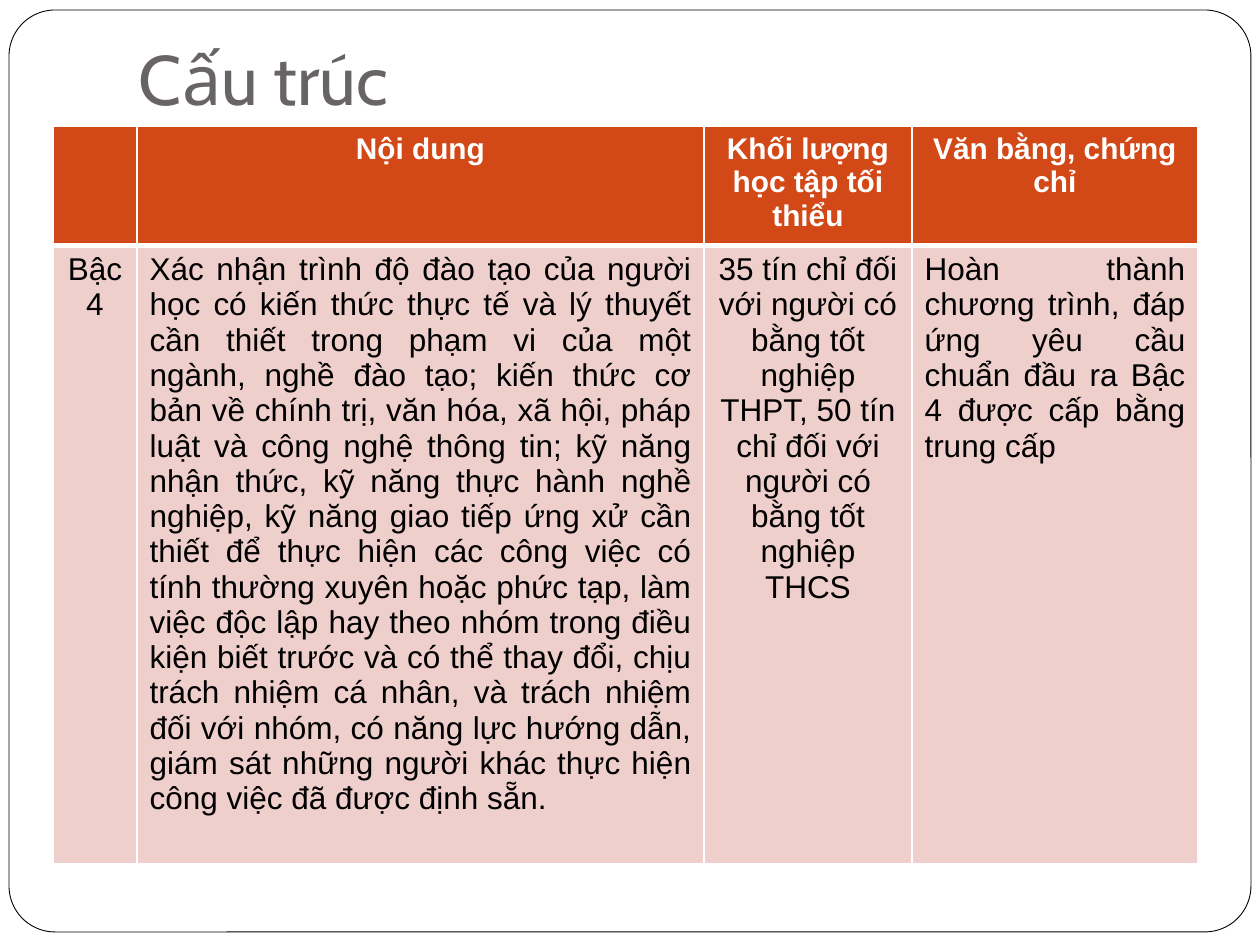
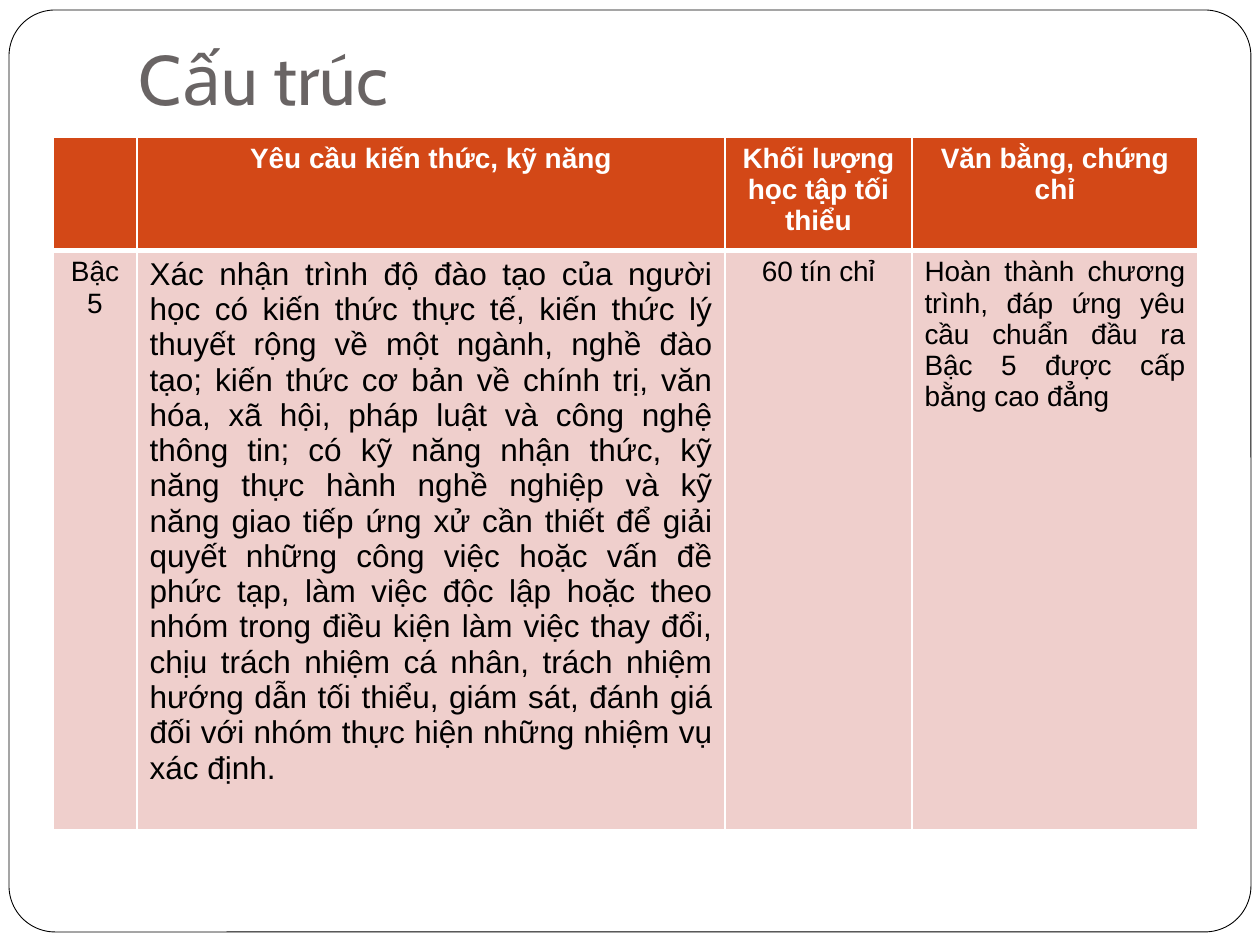
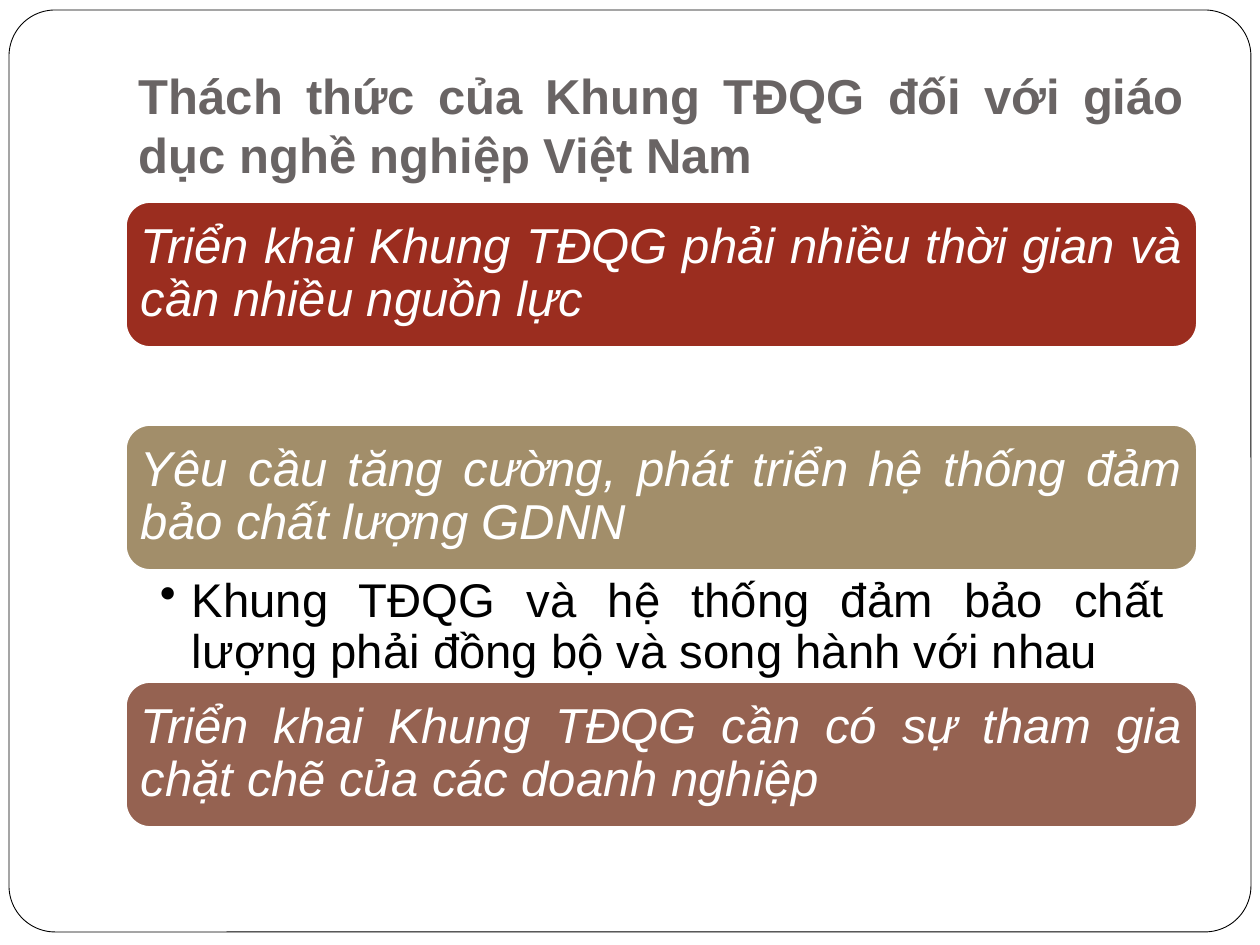
from dataclasses import dataclass

from lxml.etree import SubElement
from pptx import Presentation
from pptx.dml.color import RGBColor
from pptx.enum.shapes import MSO_SHAPE as Kind
from pptx.enum.text import MSO_ANCHOR as Anchor, PP_ALIGN as Align
from pptx.oxml.ns import qn
from pptx.util import Emu, Pt

SCALE = 914400 / 126
HEX = {
    "white": "FFFFFF", "black": "000000", "title": "696464",
    "head": "D34817", "body": "EFCFCC",
    "red": "9B2D1F", "sand": "A28E6A", "clay": "956251",
}
LEFT, WIDE = 126, 1071
BAR_TALL = 145


@dataclass(frozen=True)
class Box:
    x: int
    y: int
    w: int
    h: int


@dataclass(frozen=True)
class Font:
    size: int
    color: str
    name: str = "Arial"
    bold: bool = False
    italic: bool = False


@dataclass(frozen=True)
class Cell:
    text: str
    size: int
    align: Align = Align.CENTER


@dataclass(frozen=True)
class Grid:
    top: int
    cols: tuple[int, ...]
    rows: tuple[int, int]
    head: tuple[Cell, ...]
    body: tuple[Cell, ...]


@dataclass(frozen=True)
class Bar:
    top: int
    color: str
    text: str


TITLE = Font(40, "title", name="Cabin")
CLAIM = Font(28, "title", bold=True)
LABEL = Font(28, "white", italic=True)
NOTE = Font(27, "black")

GRIDS = (
    Grid(
        126, (84, 567, 208, 286), (112, 577),
        (Cell("", 17), Cell("Nội dung", 17),
         Cell("Khối lượng học tập tối thiểu", 17),
         Cell("Văn bằng, chứng chỉ", 17)),
        (Cell("Bậc 4", 18),
         Cell("Xác nhận trình độ đào tạo của người học có kiến thức thực tế và "
              "lý thuyết cần thiết trong phạm vi của một ngành, nghề đào tạo; "
              "kiến thức cơ bản về chính trị, văn hóa, xã hội, pháp luật và "
              "công nghệ thông tin; kỹ năng nhận thức, kỹ năng thực hành nghề "
              "nghiệp, kỹ năng giao tiếp ứng xử cần thiết để thực hiện các "
              "công việc có tính thường xuyên hoặc phức tạp, làm việc độc lập "
              "hay theo nhóm trong điều kiện biết trước và có thể thay đổi, "
              "chịu trách nhiệm cá nhân, và trách nhiệm đối với nhóm, có năng "
              "lực hướng dẫn, giám sát những người khác thực hiện công việc "
              "đã được định sẵn.", 18, Align.JUSTIFY),
         Cell("35 tín chỉ đối với người có bằng tốt nghiệp THPT, 50 tín chỉ "
              "đối với người có bằng tốt nghiệp THCS", 18),
         Cell("Hoàn thành chương trình, đáp ứng yêu cầu chuẩn đầu ra Bậc 4 "
              "được cấp bằng trung cấp", 18, Align.JUSTIFY)),
    ),
    Grid(
        137, (84, 588, 187, 286), (105, 541),
        (Cell("", 16), Cell("Yêu cầu kiến thức, kỹ năng", 16),
         Cell("Khối lượng học tập tối thiểu", 16),
         Cell("Văn bằng, chứng chỉ", 16)),
        (Cell("Bậc 5", 16),
         Cell("Xác nhận trình độ đào tạo của người học có kiến thức thực tế, "
              "kiến thức lý thuyết rộng về một ngành, nghề đào tạo; kiến thức "
              "cơ bản về chính trị, văn hóa, xã hội, pháp luật và công nghệ "
              "thông tin; có kỹ năng nhận thức, kỹ năng thực hành nghề nghiệp "
              "và kỹ năng giao tiếp ứng xử cần thiết để giải quyết những công "
              "việc hoặc vấn đề phức tạp, làm việc độc lập hoặc theo nhóm "
              "trong điều kiện làm việc thay đổi, chịu trách nhiệm cá nhân, "
              "trách nhiệm hướng dẫn tối thiểu, giám sát, đánh giá đối với "
              "nhóm thực hiện những nhiệm vụ xác định.", 18, Align.JUSTIFY),
         Cell("60 tín chỉ", 16),
         Cell("Hoàn thành chương trình, đáp ứng yêu cầu chuẩn đầu ra Bậc 5 "
              "được cấp bằng cao đẳng", 16, Align.JUSTIFY)),
    ),
)

BARS = (
    Bar(202, "red", "Triển khai Khung TĐQG phải nhiều thời gian và cần nhiều "
                    "nguồn lực"),
    Bar(425, "sand", "Yêu cầu tăng cường, phát triển hệ thống đảm bảo chất "
                     "lượng GDNN"),
    Bar(682, "clay", "Triển khai Khung TĐQG cần có sự tham gia chặt chẽ của "
                     "các doanh nghiệp"),
)


def px(num: int) -> Emu:
    return Emu(round(num * SCALE))


def place(box: Box) -> tuple[Emu, ...]:
    return tuple(px(n) for n in (box.x, box.y, box.w, box.h))


def rgb(key: str) -> RGBColor:
    return RGBColor.from_string(HEX[key])


def write(frame, text: str, font: Font, align: Align):
    """Fill the first paragraph with one run and return the paragraph."""
    para = frame.paragraphs[0]
    para.alignment = align
    run = para.add_run()
    run.text = text
    face = run.font
    face.name, face.size = font.name, Pt(font.size)
    face.bold, face.italic = font.bold, font.italic
    face.color.rgb = rgb(font.color)
    return para


def inset(frame, left: int, top: int, right: int, foot: int) -> None:
    frame.word_wrap = True
    frame.margin_left, frame.margin_top = px(left), px(top)
    frame.margin_right, frame.margin_bottom = px(right), px(foot)


def add_round(slide, box: Box, fill: str, edge: str, width: float):
    shape = slide.shapes.add_shape(Kind.ROUNDED_RECTANGLE, *place(box))
    shape.shadow.inherit = False
    shape.fill.solid()
    shape.fill.fore_color.rgb = rgb(fill)
    shape.line.color.rgb = rgb(edge)
    shape.line.width = Pt(width)
    return shape


def add_page(deck, title: str, box: Box, font: Font, align: Align):
    """Add a blank slide with the round frame and a title."""
    slide = deck.slides.add_slide(deck.slide_layouts[6])
    edge = add_round(slide, Box(9, 10, 1242, 922), "white", "black", 0.5)
    edge.adjustments[0] = 0.05
    frame = slide.shapes.add_textbox(*place(box)).text_frame
    inset(frame, 13, 6, 13, 13)
    frame.vertical_anchor = Anchor.BOTTOM
    write(frame, title, font, align)
    return slide


def rule(cell, side: str, width: int) -> None:
    """Draw a white border; call before the cell gets its fill."""
    line = SubElement(cell._tc.get_or_add_tcPr(), qn(f"a:{side}"),
                      w=str(Pt(width)))
    fill = SubElement(line, qn("a:solidFill"))
    SubElement(fill, qn("a:srgbClr"), val=HEX["white"])


def add_grid(slide, grid: Grid) -> None:
    box = Box(53, grid.top, sum(grid.cols), sum(grid.rows))
    table = slide.shapes.add_table(2, len(grid.cols), *place(box)).table
    table.horz_banding = False
    for col, wide in zip(table.columns, grid.cols):
        col.width = px(wide)
    for row, tall in zip(table.rows, grid.rows):
        row.height = px(tall)
    looks = ((grid.head, "head", "white", "lnB"),
             (grid.body, "body", "black", "lnT"))
    for row, (cells, fill, ink, thick) in zip(table.rows, looks):
        for cell, item in zip(row.cells, cells):
            for side in ("lnL", "lnR", "lnT", "lnB"):
                rule(cell, side, 3 if side == thick else 1)
            cell.fill.solid()
            cell.fill.fore_color.rgb = rgb(fill)
            if item.text:
                font = Font(item.size, ink, bold=fill == "head")
                write(cell.text_frame, item.text, font, item.align)


def add_bar(slide, bar: Bar) -> None:
    box = Box(LEFT, bar.top, WIDE, BAR_TALL)
    frame = add_round(slide, box, bar.color, "white", 1).text_frame
    inset(frame, 8, 8, 8, 8)
    frame.vertical_anchor = Anchor.MIDDLE
    write(frame, bar.text, LABEL, Align.JUSTIFY).line_spacing = 0.9


def add_note(slide, text: str) -> None:
    box = Box(LEFT, 571, WIDE, 112)
    frame = slide.shapes.add_textbox(*place(box)).text_frame
    inset(frame, 34, 6, 33, 6)
    para = write(frame, text, NOTE, Align.JUSTIFY)
    para.line_spacing = 0.9
    props = para._p.get_or_add_pPr()
    props.set("marL", str(px(32)))
    props.set("indent", str(px(-32)))
    SubElement(props, qn("a:buChar"), char="•")


def main() -> None:
    deck = Presentation()
    deck.slide_width, deck.slide_height = px(1260), px(945)
    for grid in GRIDS:
        slide = add_page(deck, "Cấu trúc", Box(LEFT, 10, WIDE, 122),
                         TITLE, Align.LEFT)
        add_grid(slide, grid)
    slide = add_page(
        deck, "Thách thức của Khung TĐQG đối với giáo dục nghề nghiệp Việt Nam",
        Box(LEFT, 38, WIDE, 158), CLAIM, Align.JUSTIFY)
    for bar in BARS:
        add_bar(slide, bar)
    add_note(slide, "Khung TĐQG và hệ thống đảm bảo chất lượng phải đồng bộ "
                    "và song hành với nhau")
    deck.save("out.pptx")


if __name__ == "__main__":
    main()
